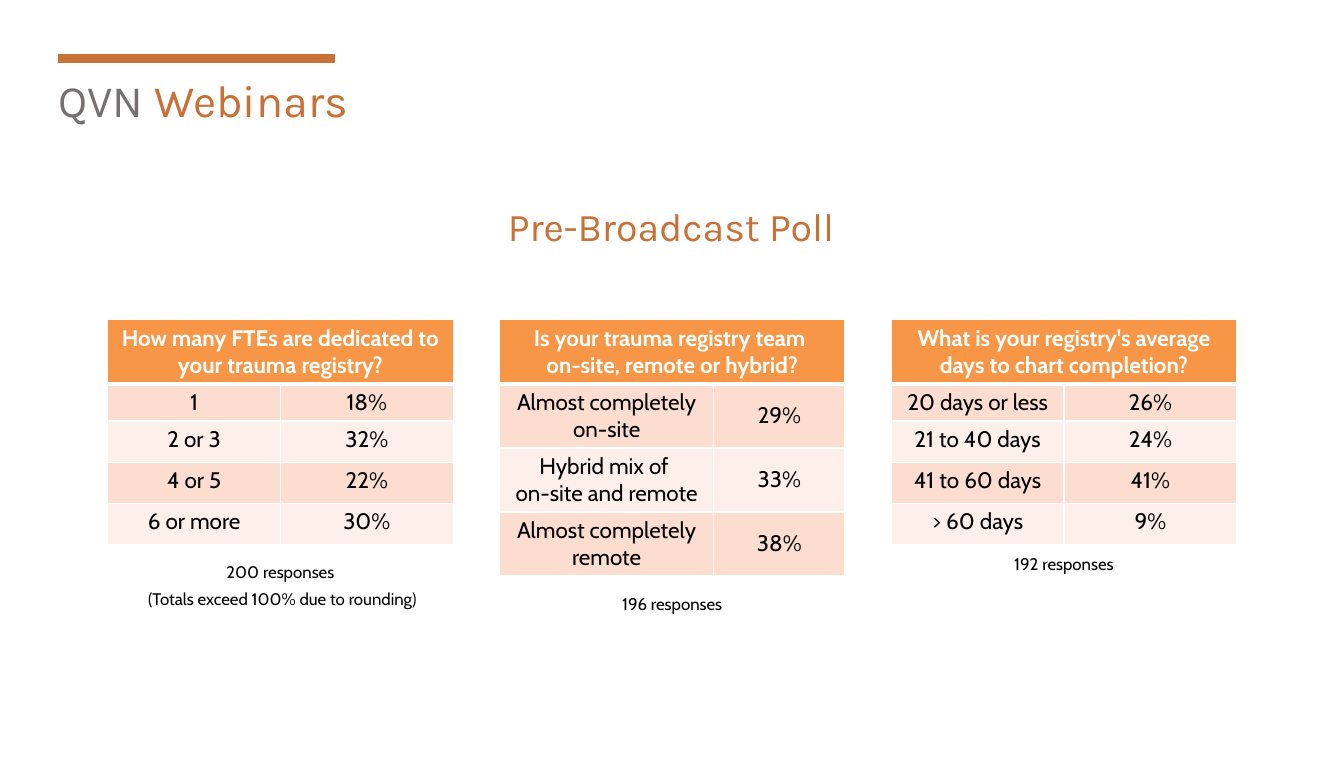
from dataclasses import dataclass

from lxml import etree
from pptx import Presentation, util as u
from pptx.dml.color import RGBColor as Rgb
from pptx.enum import shapes, text
from pptx.oxml import ns


@dataclass(frozen=True)
class Theme:
    rust: str = "C87137"
    gray: str = "767171"
    head: str = "F79646"
    bands: tuple = ("FCDDCF", "FDEFE9")
    white: str = "FFFFFF"
    black: str = "000000"
    show: str = "Karla"
    body: str = "Cabin"
    title: int = 32
    sub: int = 28
    cell: int = 16
    note: int = 12
    bar: int = 6
    rule: int = 1
    thick: int = 3


T = Theme()
WIDE, HIGH = u.Inches(13.3), u.Inches(7.5)
HEAD = 8.44
SHORT = (4.87, 5.43, 5.43, 5.43)
TALL = (HEAD,) * 3
SHOW = {"name": T.show, "size": T.title, "color": T.rust}
CELL = {"name": T.body, "size": T.cell, "color": T.black, "bold": False}
NOTE = {"name": T.body, "size": T.note, "color": T.black}

POLLS = [
    ("How many FTEs are dedicated to your trauma registry?", (50, 50), SHORT,
     [("1", "18%"), ("2 or 3", "32%"), ("4 or 5", "22%"), ("6 or more", "30%")],
     text.MSO_ANCHOR.TOP,
     [("200 responses", 1.6, 0), ("(Totals exceed 100% due to rounding)", 5.2, 0.15)]),
    ("Is your trauma registry team \non-site, remote or hybrid?", (62, 38), TALL,
     [("Almost completely on-site", "29%"),
      ("Hybrid mix of \non-site and remote", "33%"),
      ("Almost completely remote", "38%")],
     text.MSO_ANCHOR.MIDDLE, [("196 responses", 1.73, 0)]),
    ("What is your registry's average days to chart completion?", (50, 50), SHORT,
     [("20 days or less", "26%"), ("21 to 40 days", "24%"),
      ("41 to 60 days", "41%"), ("> 60 days", "9%")],
     text.MSO_ANCHOR.TOP, [("192 responses", 0.53, 0)]),
]


def col(n):
    return round(WIDE * n / 100)


def row(n):
    return round(HIGH * n / 100)


def area(box):
    x, y, w, h = box
    return col(x), row(y), col(w), row(h)


def style(font, look):
    for key, val in look.items():
        if key == "color":
            font.color.rgb = Rgb.from_string(val)
        else:
            setattr(font, key, u.Pt(val) if key == "size" else val)


def write(frame, lines, align):
    for i, runs in enumerate(lines):
        para = frame.paragraphs[0] if i == 0 else frame.add_paragraph()
        para.alignment = align
        for words, look in runs:
            run = para.add_run()
            run.text = words
            style(run.font, look)


def label(slide, box, runs, align=text.PP_ALIGN.CENTER):
    frame = slide.shapes.add_textbox(*area(box)).text_frame
    frame.word_wrap = True
    write(frame, [runs], align)


def edge(cell, top, base):
    props = cell._tc.get_or_add_tcPr()
    for side, size in zip("LRTB", (T.rule, T.rule, top, base)):
        line = etree.SubElement(props, ns.qn("a:ln" + side), w=str(u.Pt(size)))
        fill = etree.SubElement(line, ns.qn("a:solidFill"))
        etree.SubElement(fill, ns.qn("a:srgbClr"), val=T.white)


def paint(cell, fill, top, base):
    edge(cell, top, base)
    cell.fill.solid()
    cell.fill.fore_color.rgb = Rgb.from_string(fill)


def fill_in(cell, words, look):
    lines = [[(line, look)] for line in words.split("\n")]
    write(cell.text_frame, lines, text.PP_ALIGN.CENTER)


def banner(slide, box):
    x, y, w, h = box
    bar = slide.shapes.add_connector(
        shapes.MSO_CONNECTOR.STRAIGHT,
        col(x + 0.68), row(y - 1.2), col(x + 21.35), row(y - 1.2))
    bar.line.color.rgb = Rgb.from_string(T.rust)
    bar.line.width = u.Pt(T.bar)
    etree.SubElement(bar._element.spPr, ns.qn("a:effectLst"))
    label(slide, box, [("QVN", SHOW | {"color": T.gray}), (" Webinars", SHOW)],
          text.PP_ALIGN.LEFT)


def poll(slide, box, ask, cols, rows, data, anchor, notes):
    x, y, w, h = box
    grid = slide.shapes.add_table(len(data) + 1, len(cols), *area(box)).table
    for part, share in zip(grid.columns, cols):
        part.width = col(w * share / 100)
    for part, size in zip(grid.rows, (HEAD, *rows)):
        part.height = row(size)
    for j in range(len(cols)):
        paint(grid.cell(0, j), T.head, T.rule, T.thick)
    grid.cell(0, 0).merge(grid.cell(0, len(cols) - 1))
    fill_in(grid.cell(0, 0), ask, CELL | {"color": T.white, "bold": True})
    for i, pair in enumerate(data):
        for j, words in enumerate(pair):
            cell = grid.cell(i + 1, j)
            paint(cell, T.bands[i % 2], T.rule if i else T.thick, T.rule)
            cell.vertical_anchor = anchor
            fill_in(cell, words, CELL)
    for words, gap, shift in notes:
        label(slide, (x + shift, y + h + gap, w, 4), [(words, NOTE)])


def main():
    deck = Presentation()
    deck.slide_width, deck.slide_height = WIDE, HIGH
    slide = deck.slides.add_slide(deck.slide_layouts[6])
    banner(slide, (3.61, 8.93, 25, 8.53))
    label(slide, (0, 26, 99.85, 7.6),
          [("Pre-Broadcast Poll", SHOW | {"size": T.sub})])
    for i, (ask, cols, rows, *rest) in enumerate(POLLS):
        box = (8.02 + 29.15 * i, 42.2, 25.7, HEAD + sum(rows))
        poll(slide, box, ask, cols, rows, *rest)
    deck.save("out.pptx")


if __name__ == "__main__":
    main()
